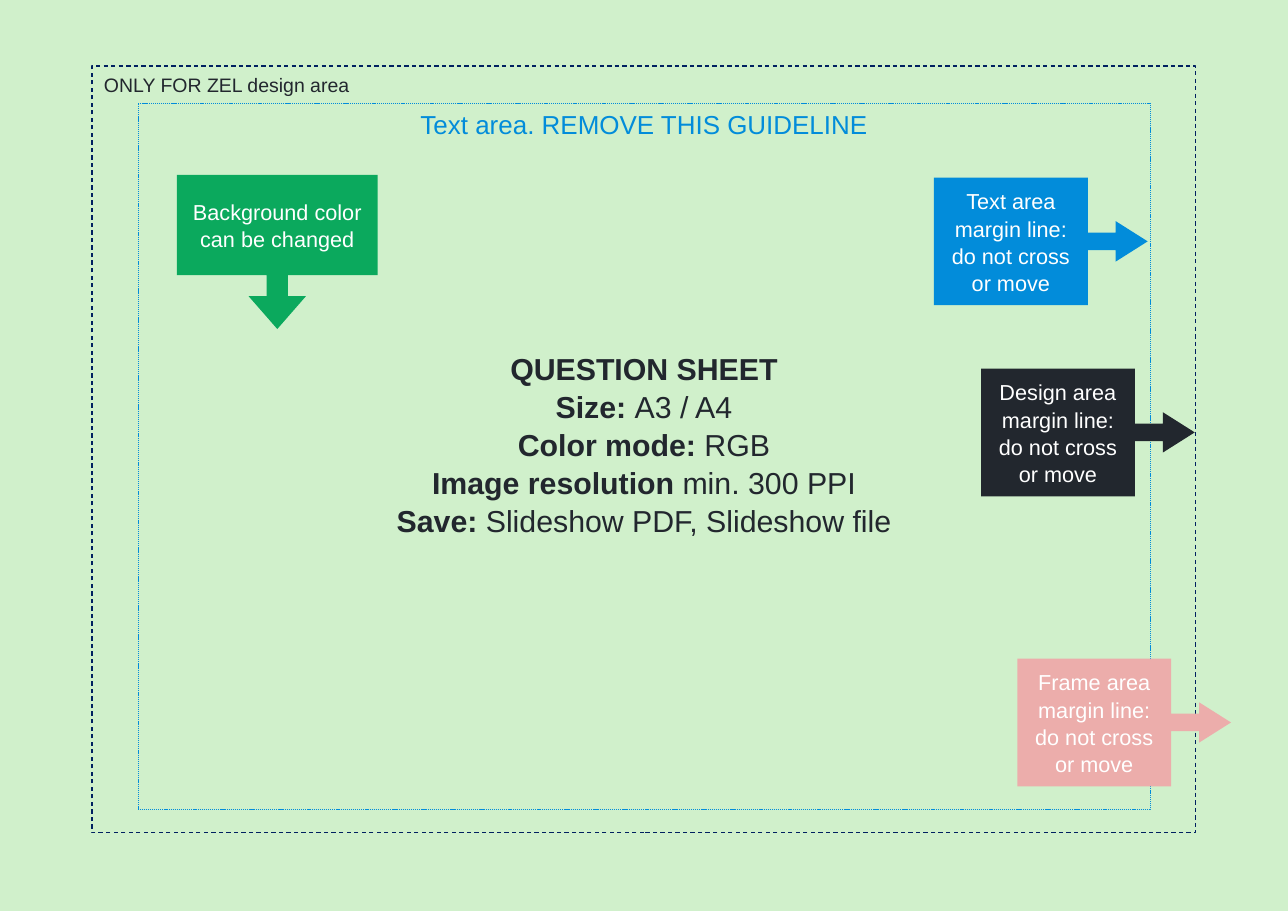
from pptx import Presentation
from pptx import util as u
from pptx.dml import color
from pptx.enum import dml, shapes, text

Pt = u.Pt
PAGE_WIDTH, PAGE_HEIGHT = 1190.16, 841.68
BLUE, DARK, WHITE = "028CDA", "22272E", "FFFFFF"
NOTE = {"size": Pt(20), "color": WHITE}
GUIDE = {"size": Pt(24), "color": BLUE}
DETAIL = {"size": Pt(28), "color": DARK}
LABEL = {"size": Pt(18), "color": DARK}


def rgb(value):
    return color.RGBColor.from_string(value)


def add_box(parent, kind, place, fill=None, line=None, weight=1):
    box = parent.add_shape(kind, *map(Pt, place))
    box.shadow.inherit = False
    if fill:
        box.fill.solid()
        box.fill.fore_color.rgb = rgb(fill)
    else:
        box.fill.background()
    if line:
        box.line.color.rgb = rgb(line)
        box.line.width = Pt(weight)
        box.line.dash_style = dml.MSO_LINE.DASH
    else:
        box.line.fill.background()
    return box


def set_frame(box, anchor, side, edge):
    values = {
        "word_wrap": True,
        "vertical_anchor": anchor,
        "margin_left": Pt(side),
        "margin_right": Pt(side),
        "margin_top": Pt(edge),
        "margin_bottom": Pt(edge),
    }
    for name, value in values.items():
        setattr(box.text_frame, name, value)


def add_para(box, spans, style, align=text.PP_ALIGN.CENTER, before=0):
    frame = box.text_frame
    para = frame.paragraphs[0]
    if para.runs:
        para = frame.add_paragraph()
    para.alignment = align
    para.line_spacing = 1.05
    para.space_before = Pt(before)
    for words, bold in spans:
        span = para.add_run()
        span.text = words
        for name, value in {"name": "Arial", "size": style["size"], "bold": bold}.items():
            setattr(span.font, name, value)
        span.font.color.rgb = rgb(style["color"])


def add_callout(page, kind, place, fill, adjustments, lines):
    box = add_box(page.shapes, kind, place, fill)
    for index, value in enumerate(adjustments):
        box.adjustments[index] = value
    set_frame(box, text.MSO_ANCHOR.MIDDLE, 10, 5)
    for line in lines:
        add_para(box, [(line, False)], NOTE)


def add_text_area(page):
    box = add_box(page.shapes, shapes.MSO_SHAPE.RECTANGLE, (127.5, 95, 935, 652.5), line=BLUE, weight=0.25)
    set_frame(box, text.MSO_ANCHOR.TOP, 8, 4.3)
    add_para(box, [("Text area. REMOVE THIS GUIDELINE", False)], GUIDE)
    add_para(box, [("QUESTION SHEET", True)], DETAIL, before=192)
    details = [
        ("Size: ", "A3 / A4"),
        ("Color mode: ", "RGB"),
        ("Image resolution ", "min. 300 PPI"),
        ("Save: ", "Slideshow PDF, Slideshow file"),
    ]
    for term, value in details:
        add_para(box, [(term, True), (value, False)], DETAIL)


def add_design_area(page):
    group = page.shapes.add_group_shape()
    add_box(group.shapes, shapes.MSO_SHAPE.RECTANGLE, (85, 61, 1020, 708.5), line="002060")
    label = group.shapes.add_textbox(*map(Pt, (89, 62.5, 342, 29)))
    set_frame(label, text.MSO_ANCHOR.TOP, 7.2, 3.6)
    add_para(label, [("ONLY FOR ZEL design area", False)], LABEL, text.PP_ALIGN.LEFT)


def main():
    deck = Presentation()
    deck.slide_width, deck.slide_height = Pt(PAGE_WIDTH), Pt(PAGE_HEIGHT)
    page = deck.slides.add_slide(deck.slide_layouts[6])
    kinds = shapes.MSO_SHAPE

    add_box(page.shapes, kinds.RECTANGLE, (0, 0, PAGE_WIDTH, PAGE_HEIGHT), "D0F0CB")
    add_text_area(page)
    add_callout(page, kinds.DOWN_ARROW_CALLOUT, (163.5, 161.5, 185.5, 142.5), "0BA95D",
                (0.139, 0.186, 0.213, 0.65), ["Background color can be changed"])
    add_design_area(page)
    margins = [
        ("Frame", 940, 608.5, "ECADAB"),
        ("Design", 906.5, 340.5, DARK),
        ("Text", 863, 164, BLUE),
    ]
    for area, left, top, fill in margins:
        add_callout(page, kinds.RIGHT_ARROW_CALLOUT, (left, top, 197.5, 118), fill,
                    (0.137, 0.158, 0.25, 0.72),
                    [f"{area} area margin line:", "do not cross or move"])
    deck.save("out.pptx")


if __name__ == "__main__":
    main()
